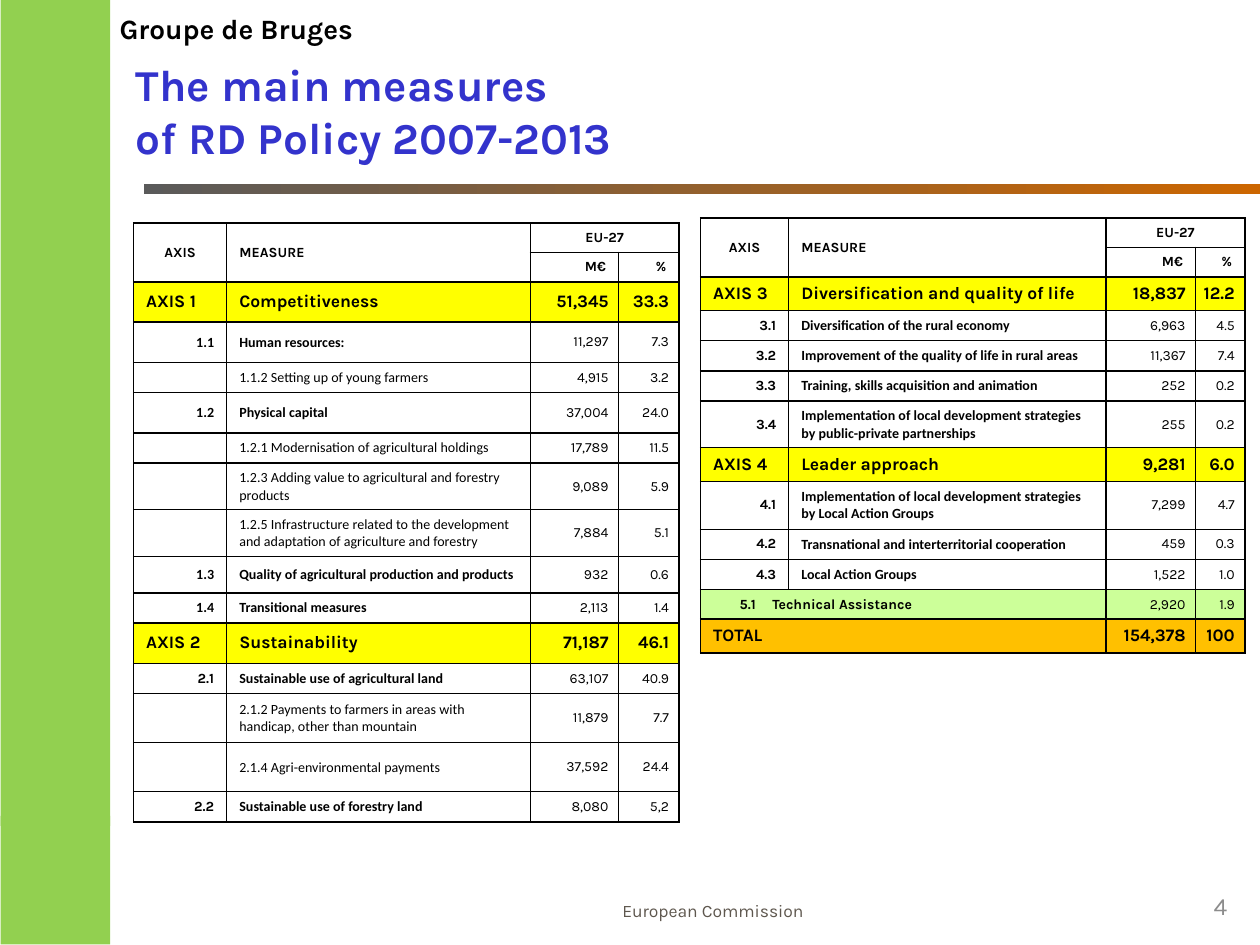
from pptx import Presentation
from pptx.dml.color import RGBColor
from pptx.enum.shapes import MSO_SHAPE as Shape
from pptx.enum.text import MSO_ANCHOR as Anchor, PP_ALIGN as Align
from pptx.oxml import parse_xml
from pptx.oxml.ns import nsdecls
from pptx.util import Inches, Pt

BLACK = RGBColor(0x00, 0x00, 0x00)
GREEN = RGBColor(0x92, 0xD0, 0x50)
BLUE = RGBColor(0x33, 0x33, 0xCC)
GREY = RGBColor(0x5A, 0x5A, 0x5A)
ORANGE = RGBColor(0xCC, 0x66, 0x00)
FOOTER = RGBColor(0x5E, 0x57, 0x4E)
NUMBER = RGBColor(0x8C, 0x8C, 0x8C)
YELLOW = RGBColor(0xFF, 0xFF, 0x00)
LIME = RGBColor(0xCC, 0xFF, 0x99)
AMBER = RGBColor(0xFF, 0xC0, 0x00)

# Each row: height, index, measure, M€, %
LEFT_ROWS = [
    (0.32, "AXIS 1", "Competitiveness", "51,345", "33.3"),
    (0.32, "1.1", "Human resources:", "11,297", "7.3"),
    (0.24, "", "1.1.2 Setting up of young farmers", "4,915", "3.2"),
    (0.32, "1.2", "Physical capital", "37,004", "24.0"),
    (0.24, "", "1.2.1 Modernisation of agricultural holdings", "17,789", "11.5"),
    (0.37, "", "1.2.3 Adding value to agricultural and forestry products", "9,089", "5.9"),
    (0.37, "", "1.2.5 Infrastructure related to the development and adaptation "
               "of agriculture and forestry", "7,884", "5.1"),
    (0.29, "1.3", "Quality of agricultural production and products", "932", "0.6"),
    (0.24, "1.4", "Transitional measures", "2,113", "1.4"),
    (0.32, "AXIS 2", "Sustainability", "71,187", "46.1"),
    (0.24, "2.1", "Sustainable use of agricultural land", "63,107", "40.9"),
    (0.39, "", "2.1.2 Payments to farmers in areas with handicap, "
               "other than mountain", "11,879", "7.7"),
    (0.39, "", "2.1.4 Agri-environmental payments", "37,592", "24.4"),
    (0.24, "2.2", "Sustainable use of forestry land", "8,080", "5,2"),
]
RIGHT_ROWS = [
    (0.26, "AXIS 3", "Diversification and quality of life", "18,837", "12.2"),
    (0.24, "3.1", "Diversification of the rural economy", "6,963", "4.5"),
    (0.24, "3.2", "Improvement of the quality of life in rural areas", "11,367", "7.4"),
    (0.24, "3.3", "Training, skills acquisition and animation", "252", "0.2"),
    (0.37, "3.4", "Implementation of local development strategies "
                  "by public-private partnerships", "255", "0.2"),
    (0.26, "AXIS 4", "Leader approach", "9,281", "6.0"),
    (0.38, "4.1", "Implementation of local development strategies "
                  "by Local Action Groups", "7,299", "4.7"),
    (0.24, "4.2", "Transnational and interterritorial cooperation", "459", "0.3"),
    (0.24, "4.3", "Local Action Groups", "1,522", "1.0"),
    (0.23, "5.1", "Technical Assistance", "2,920", "1.9"),
    (0.26, "TOTAL", "", "154,378", "100"),
]


def add_run(paragraph, text, size, color=BLACK, font="Karla", bold=False):
    run = paragraph.add_run()
    run.text = text
    run.font.size, run.font.name, run.font.bold = Pt(size), font, bold
    run.font.color.rgb = color


def add_text(slide, box, lines, size, color, bold=False, align=Align.LEFT,
             anchor=Anchor.MIDDLE, wrap=True):
    frame = slide.shapes.add_textbox(*map(Inches, box)).text_frame
    frame.word_wrap, frame.vertical_anchor = wrap, anchor
    paragraph = frame.paragraphs[0]
    paragraph.alignment = align
    for number, line in enumerate(lines):
        if number:
            paragraph.add_line_break()
        add_run(paragraph, line, size, color, bold=bold)


def add_band(slide, box, rotation=0):
    band = slide.shapes.add_shape(Shape.RECTANGLE, *map(Inches, box))
    band.shadow.inherit = False
    band.line.fill.background()
    band.rotation = rotation
    return band


def add_sidebar(slide):
    """Plain green strip down the left edge, in two overlapping parts."""
    for box in ((-2.84, 2.84, 6.56, 0.87), (-0.07, 6.55, 1.02, 0.87)):
        strip = add_band(slide, box, 270)
        strip.fill.solid()
        strip.fill.fore_color.rgb = GREEN


def add_rule(slide, box):
    rule = add_band(slide, box)
    rule.fill.gradient()
    rule.fill.gradient_angle = 0
    for stop, color in zip(rule.fill.gradient_stops, (GREY, ORANGE)):
        stop.color.rgb = color


def prepare_cell(cell):
    """Thin black borders, no fill, and a small size for empty text."""
    props = cell._tc.get_or_add_tcPr()
    for side in "LRTB":
        props.append(parse_xml(
            f'<a:ln{side} {nsdecls("a")} w="12700"><a:solidFill>'
            f'<a:srgbClr val="000000"/></a:solidFill></a:ln{side}>'))
    cell.fill.background()
    cell.vertical_anchor = Anchor.MIDDLE
    cell.text_frame.paragraphs[0]._p.append(
        parse_xml(f'<a:endParaRPr {nsdecls("a")} sz="800"/>'))


def write_cell(cell, text, size=8, align=Align.LEFT, bold=True, font="Karla"):
    paragraph = cell.text_frame.paragraphs[0]
    paragraph.alignment = align
    if text:
        add_run(paragraph, text, size, font=font, bold=bold)


def write_header(table):
    for first, last in (((0, 0), (1, 0)), ((0, 1), (1, 1)), ((0, 2), (0, 3))):
        table.cell(*first).merge(table.cell(*last))
    write_cell(table.cell(0, 0), "AXIS", align=Align.CENTER)
    write_cell(table.cell(0, 1), "MEASURE")
    write_cell(table.cell(0, 2), "EU-27", align=Align.CENTER)
    write_cell(table.cell(1, 2), "M€", align=Align.RIGHT)
    write_cell(table.cell(1, 3), "%", align=Align.RIGHT)


def write_row(cells, index, measure, *figures):
    major = index.startswith("AXIS") or index == "TOTAL"
    size = 10 if major else 8
    fill = YELLOW if major else None
    if index in ("TOTAL", "5.1"):
        fill = AMBER if major else LIME
        cells[0].merge(cells[1])
    if index == "5.1":
        # Hanging indent sets the measure apart from its number
        props = cells[0].text_frame.paragraphs[0]._p.get_or_add_pPr()
        props.set("marL", str(Inches(0.47)))
        props.set("indent", str(-Inches(0.26)))
        write_cell(cells[0], f"{index}\t{measure}")
    else:
        write_cell(cells[0], index, size, Align.LEFT if major else Align.RIGHT,
                   font="Calibri" if index.startswith("1.") else "Karla")
        write_cell(cells[1], measure, size, bold=bool(index),
                   font="Karla" if major else "Calibri")
    for cell, figure in zip(cells[2:], figures):
        cell.margin_left = cell.margin_top = cell.margin_bottom = 0
        cell.margin_right = Inches(0.08)
        write_cell(cell, figure, size, Align.RIGHT, major)
    if fill is not None:
        for cell in cells:
            cell.fill.solid()
            cell.fill.fore_color.rgb = fill


def add_measures(slide, left, top, widths, rows):
    heights = [0.23, 0.23] + [row[0] for row in rows]
    box = (left, top, sum(widths), sum(heights))
    table = slide.shapes.add_table(len(heights), 4, *map(Inches, box)).table
    table.first_row = table.horz_banding = False
    for column, width in zip(table.columns, widths):
        column.width = Inches(width)
    for row, height in zip(table.rows, heights):
        row.height = Inches(height)
    for cell in table.iter_cells():
        prepare_cell(cell)
    write_header(table)
    for number, (_, *content) in enumerate(rows, start=2):
        write_row([table.cell(number, column) for column in range(4)], *content)


def main():
    deck = Presentation()
    deck.slide_width, deck.slide_height = Inches(10), Inches(7.5)
    slide = deck.slides.add_slide(deck.slide_layouts[6])
    # Frame of the page
    add_rule(slide, (1.14, 1.46, 8.87, 0.08))
    add_sidebar(slide)
    add_text(slide, (0.85, 0.04, 2.22, 0.37), ["Groupe de Bruges"], 16, BLACK,
             bold=True, anchor=Anchor.BOTTOM, wrap=False)
    add_text(slide, (4.84, 7.05, 3.39, 0.31), ["European Commission"], 10, FOOTER,
             anchor=Anchor.BOTTOM)
    add_text(slide, (9.28, 7.03, 0.56, 0.31), ["4"], 14, NUMBER, align=Align.RIGHT)
    # Title and the two tables of measures
    add_text(slide, (0.98, 0.44, 7.64, 0.87),
             ["The main measures", "of RD Policy 2007-2013"], 25.2, BLUE, bold=True)
    add_measures(slide, 1.06, 1.77, (0.74, 2.41, 0.7, 0.48), LEFT_ROWS)
    add_measures(slide, 5.56, 1.73, (0.7, 2.52, 0.71, 0.39), RIGHT_ROWS)
    deck.save("out.pptx")


if __name__ == "__main__":
    main()
